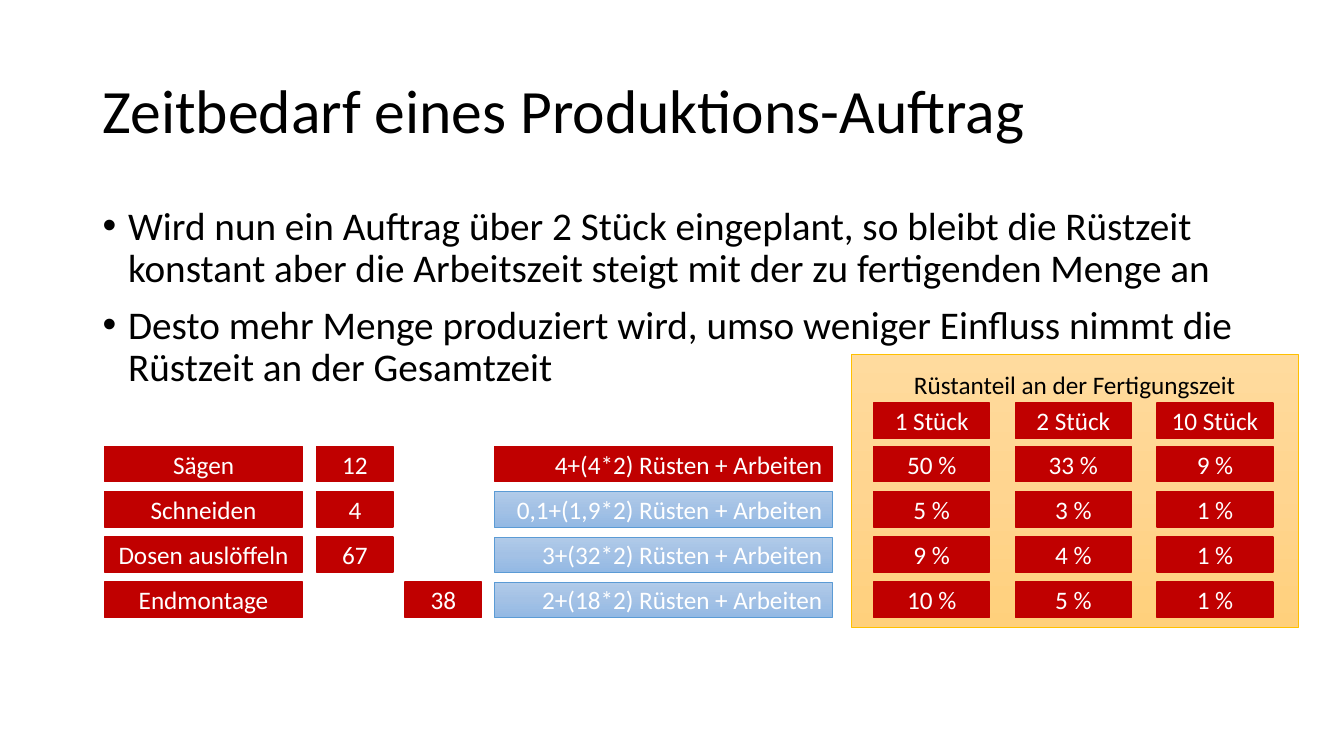
from copy import deepcopy
from dataclasses import dataclass

from lxml import etree
from pptx import Presentation
from pptx.dml.color import RGBColor
from pptx.enum.shapes import MSO_SHAPE
from pptx.enum.text import MSO_ANCHOR, PP_ALIGN
from pptx.oxml.ns import qn
from pptx.util import Cm, Pt

RECTANGLE = MSO_SHAPE.RECTANGLE
TOP, MIDDLE = MSO_ANCHOR.TOP, MSO_ANCHOR.MIDDLE
LEFT, CENTER, RIGHT = PP_ALIGN.LEFT, PP_ALIGN.CENTER, PP_ALIGN.RIGHT
FONT = "Calibri"
COLORS = {
    "black": "000000", "white": "FFFFFF", "red": "C00000",
    "blue_line": "5B9BD5", "gold_line": "FFC000",
    "blue_start": "B1CBE9", "blue_middle": "A3C1E5", "blue_end": "93B9E4",
    "gold_start": "FFDB9E", "gold_middle": "FFD590", "gold_end": "FFD07C",
}

# Grid of the time table, in centimetres
FIRST_ROW, ROW_PITCH, ROW_HEIGHT = 11.25, 1.14, 0.89
HEADER_TOP = 10.16
SHARE_LEFT, SHARE_PITCH = 22.02, 3.57


@dataclass(frozen=True)
class Style:
    fill: tuple[str, ...]
    line: str
    line_width: float


@dataclass(frozen=True)
class Column:
    left: float
    width: float
    align: PP_ALIGN = CENTER


@dataclass(frozen=True)
class Step:
    name: str
    minutes: str
    minutes_column: Column
    formula: str
    formula_style: Style
    shares: tuple[str, str, str]


RED = Style(("red",), "red", 1)
BLUE = Style(("blue_start", "blue_middle", "blue_end"), "blue_line", 0.5)
GOLD = Style(("gold_start", "gold_middle", "gold_end"), "gold_line", 0.5)

NAME = Column(2.64, 4.98)
PARTS = Column(7.98, 1.93)
ASSEMBLY = Column(10.21, 1.93)
FORMULA = Column(12.47, 8.51, RIGHT)
SHARES = [Column(SHARE_LEFT + index * SHARE_PITCH, 2.92) for index in range(3)]

TITLE = "Zeitbedarf eines Produktions-Auftrag"
BULLETS = (
    "Wird nun ein Auftrag über 2 Stück eingeplant, so bleibt die Rüstzeit "
    "konstant aber die Arbeitszeit steigt mit der zu fertigenden Menge an",
    "Desto mehr Menge produziert wird, umso weniger Einfluss nimmt die "
    "Rüstzeit an der Gesamtzeit",
)
PANEL_TITLE = "Rüstanteil an der Fertigungszeit"
QUANTITIES = ("1 Stück", "2 Stück", "10 Stück")
STEPS = (
    Step("Sägen", "12", PARTS, "4+(4*2) Rüsten + Arbeiten", RED,
         ("50 %", "33 %", "9 %")),
    Step("Schneiden", "4", PARTS, "0,1+(1,9*2) Rüsten + Arbeiten", BLUE,
         ("5 %", "3 %", "1 %")),
    Step("Dosen auslöffeln", "67", PARTS, "3+(32*2) Rüsten + Arbeiten", BLUE,
         ("9 %", "4 %", "1 %")),
    Step("Endmontage", "38", ASSEMBLY, "2+(18*2) Rüsten + Arbeiten", BLUE,
         ("10 %", "5 %", "1 %")),
)


def rgb(name: str) -> RGBColor:
    return RGBColor.from_string(COLORS[name])


def add_run(paragraph, text: str, size: float, color: str) -> None:
    run = paragraph.add_run()
    run.text = text
    run.font.name = FONT
    run.font.size = Pt(size)
    run.font.color.rgb = rgb(color)


def paint(shape, style: Style) -> None:
    fill = shape.fill
    if len(style.fill) == 1:
        fill.solid()
        fill.fore_color.rgb = rgb(style.fill[0])
    else:
        fill.gradient()
        fill.gradient_angle = 270
        first_stop = next(shape._element.spPr.iter(qn("a:gs")))
        first_stop.addnext(deepcopy(first_stop))
        for index, (stop, color) in enumerate(zip(fill.gradient_stops, style.fill)):
            stop.position = index / 2
            stop.color.rgb = rgb(color)
    shape.line.color.rgb = rgb(style.line)
    shape.line.width = Pt(style.line_width)


def add_box(slide, column: Column, top: float, height: float, text: str,
            style: Style = RED, color: str = "white"):
    shape = slide.shapes.add_shape(
        RECTANGLE, Cm(column.left), Cm(top), Cm(column.width), Cm(height))
    shape.shadow.inherit = False
    paint(shape, style)
    frame = shape.text_frame
    frame.word_wrap = True
    frame.vertical_anchor = MIDDLE
    paragraph = frame.paragraphs[0]
    paragraph.alignment = column.align
    add_run(paragraph, text, 18, color)
    return shape


def add_text(slide, top: float, height: float, texts: tuple[str, ...],
             size: float, anchor: MSO_ANCHOR, bulleted: bool) -> None:
    box = slide.shapes.add_textbox(Cm(2.34), Cm(top), Cm(29.21), Cm(height))
    frame = box.text_frame
    frame.word_wrap = True
    frame.vertical_anchor = anchor
    for index, text in enumerate(texts):
        paragraph = frame.add_paragraph() if index else frame.paragraphs[0]
        if bulleted:
            properties = paragraph._p.get_or_add_pPr()
            properties.set("marL", str(Cm(0.64)))
            properties.set("indent", str(-Cm(0.64)))
            etree.SubElement(properties, qn("a:buFont"), typeface="Arial")
            etree.SubElement(properties, qn("a:buChar"), char="•")
        paragraph.alignment = LEFT
        paragraph.line_spacing = 0.9
        if index:
            paragraph.space_before = Pt(10)
        add_run(paragraph, text, size, "black")


def add_panel(slide) -> None:
    panel = add_box(slide, Column(21.46, 11.25), 8.92, 6.88, PANEL_TITLE, GOLD, "black")
    panel.text_frame.vertical_anchor = TOP
    panel.text_frame.margin_top = Cm(0.39)


def add_step(slide, step: Step, top: float) -> None:
    add_box(slide, NAME, top, ROW_HEIGHT, step.name)
    add_box(slide, step.minutes_column, top, ROW_HEIGHT, step.minutes)
    add_box(slide, FORMULA, top, ROW_HEIGHT, step.formula, step.formula_style)
    for column, share in zip(SHARES, step.shares):
        add_box(slide, column, top, ROW_HEIGHT, share)


def main() -> None:
    presentation = Presentation()
    presentation.slide_width = Cm(33.87)
    presentation.slide_height = Cm(19.05)
    slide = presentation.slides.add_slide(presentation.slide_layouts[6])

    # Panel behind the setup shares
    add_panel(slide)

    # Title and bullets
    add_text(slide, 1.02, 3.68, (TITLE,), 44, MIDDLE, False)
    add_text(slide, 5.08, 5.11, BULLETS, 28, TOP, True)

    # Production steps and their setup shares
    for column, quantity in zip(SHARES, QUANTITIES):
        add_box(slide, column, HEADER_TOP, ROW_HEIGHT, quantity)
    for index, step in enumerate(STEPS):
        add_step(slide, step, FIRST_ROW + index * ROW_PITCH)

    presentation.save("out.pptx")


if __name__ == "__main__":
    main()
